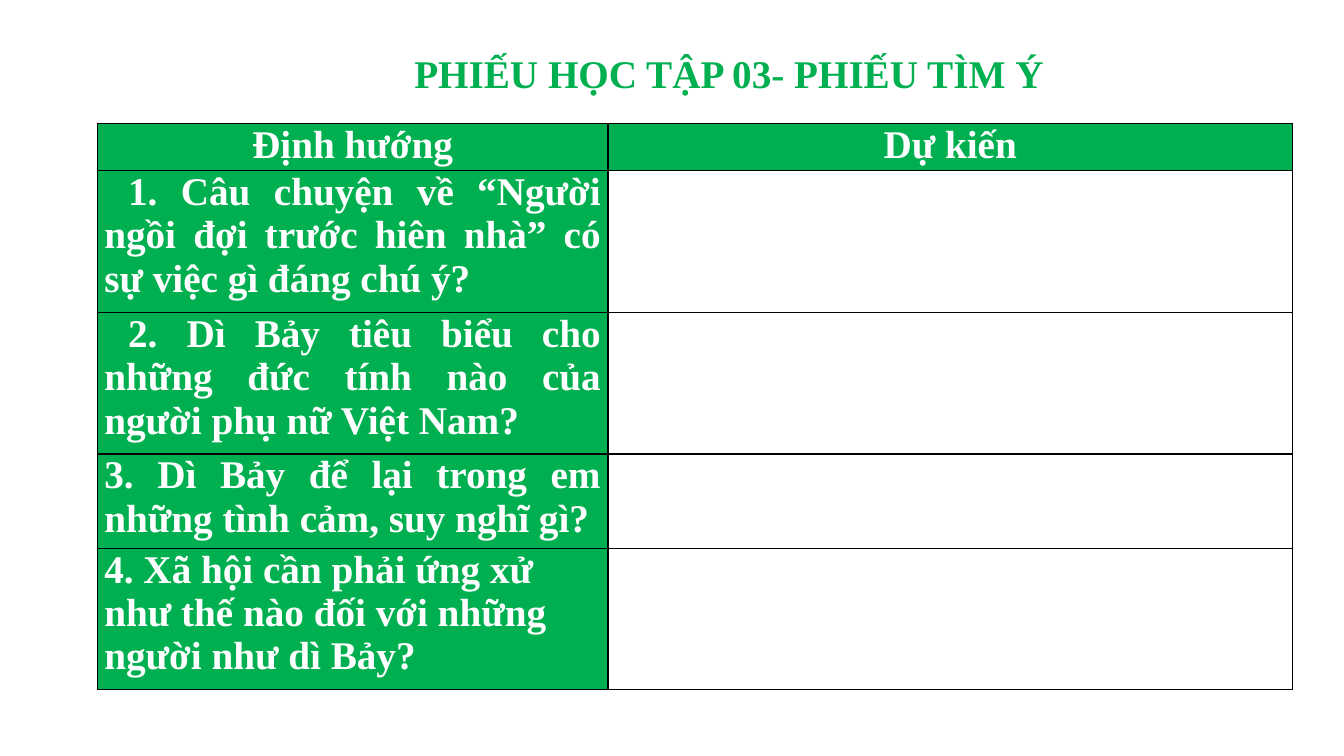
from dataclasses import dataclass

import lxml.etree
import pptx
import pptx.dml.color
import pptx.enum.text
import pptx.oxml.ns
import pptx.presentation
import pptx.slide
import pptx.table
import pptx.text.text
import pptx.util

Cm = pptx.util.Cm
Pt = pptx.util.Pt
Align = pptx.enum.text.PP_ALIGN

GREEN = pptx.dml.color.RGBColor(0x00, 0xB0, 0x50)
WHITE = pptx.dml.color.RGBColor(0xFF, 0xFF, 0xFF)
BLACK = pptx.dml.color.RGBColor(0x00, 0x00, 0x00)
FONT_NAME = "Times New Roman"
FONT_SIZE = Pt(28)
BORDER_WIDTH = Pt(1)
COLUMN_WIDTHS = (Cm(12.87), Cm(17.25))


@dataclass(frozen=True)
class WorksheetRow:
    height: pptx.util.Length
    texts: tuple[str, ...]
    alignment: Align = Align.JUSTIFY
    indent: pptx.util.Length = Cm(0)
    space_after: pptx.util.Length = Pt(0)


ROWS = (
    WorksheetRow(Cm(1.19), ("Định hướng", "Dự kiến"), Align.CENTER),
    WorksheetRow(
        Cm(3.57),
        ("1. Câu chuyện về “Người ngồi đợi trước hiên nhà” có sự việc gì đáng chú ý?", ""),
        indent=Cm(0.6),
    ),
    WorksheetRow(
        Cm(3.57),
        ("2. Dì Bảy tiêu biểu cho những đức tính nào của người phụ nữ Việt Nam?", ""),
        indent=Cm(0.6),
    ),
    WorksheetRow(Cm(2.37), ("3. Dì Bảy để lại trong em những tình cảm, suy nghĩ gì?", "")),
    WorksheetRow(
        Cm(3.57),
        ("4. Xã hội cần phải ứng xử như thế nào đối với những người như dì Bảy?", ""),
        Align.LEFT,
        space_after=Pt(8),
    ),
)


def format_paragraph(
    paragraph: pptx.text.text._Paragraph,
    color: pptx.dml.color.RGBColor,
    alignment: Align,
) -> None:
    paragraph.alignment = alignment
    paragraph.font.name = FONT_NAME
    paragraph.font.size = FONT_SIZE
    paragraph.font.bold = True
    paragraph.font.color.rgb = color


def add_borders(cell: pptx.table._Cell) -> None:
    qualified = pptx.oxml.ns.qn
    properties = cell._tc.get_or_add_tcPr()
    for side in ("lnL", "lnR", "lnT", "lnB"):
        line = lxml.etree.SubElement(properties, qualified(f"a:{side}"), w=str(BORDER_WIDTH))
        fill = lxml.etree.SubElement(line, qualified("a:solidFill"))
        lxml.etree.SubElement(fill, qualified("a:srgbClr"), val=str(BLACK))


def fill_cell(cell: pptx.table._Cell, text: str, row: WorksheetRow) -> None:
    add_borders(cell)
    cell.margin_left = cell.margin_right = Cm(0.18)
    cell.margin_top = cell.margin_bottom = Cm(0)
    if not text:
        cell.fill.background()
        return
    cell.fill.solid()
    cell.fill.fore_color.rgb = GREEN
    paragraph = cell.text_frame.paragraphs[0]
    paragraph.text = text
    paragraph.space_after = row.space_after
    if row.indent:
        paragraph._p.get_or_add_pPr().set("indent", str(row.indent))
    format_paragraph(paragraph, WHITE, row.alignment)


def add_title(slide: pptx.slide.Slide) -> None:
    title = slide.shapes.title
    title.left, title.top, title.width, title.height = Cm(9.9), Cm(0.94), Cm(16.94), Cm(1.52)
    frame = title.text_frame
    frame.text = "PHIẾU HỌC TẬP 03- PHIẾU TÌM Ý"
    frame.word_wrap = True
    frame.auto_size = pptx.enum.text.MSO_AUTO_SIZE.SHAPE_TO_FIT_TEXT
    frame.vertical_anchor = pptx.enum.text.MSO_ANCHOR.TOP
    paragraph = frame.paragraphs[0]
    paragraph.line_spacing = 1.15
    paragraph.space_before = Pt(0)
    format_paragraph(paragraph, GREEN, Align.CENTER)


def add_worksheet(slide: pptx.slide.Slide) -> None:
    table = slide.shapes.add_table(
        len(ROWS),
        len(COLUMN_WIDTHS),
        Cm(2.45),
        Cm(3.11),
        sum(COLUMN_WIDTHS),
        sum(row.height for row in ROWS),
    ).table
    table.first_row = False
    table.horz_banding = False
    for column, width in zip(table.columns, COLUMN_WIDTHS):
        column.width = width
    for table_row, row in zip(table.rows, ROWS):
        table_row.height = row.height
        for cell, text in zip(table_row.cells, row.texts):
            fill_cell(cell, text, row)


def main() -> None:
    presentation = pptx.Presentation()
    presentation.slide_width = Cm(33.87)
    presentation.slide_height = Cm(19.05)
    slide = presentation.slides.add_slide(presentation.slide_layouts.get_by_name("Title Only"))
    add_title(slide)
    add_worksheet(slide)
    presentation.save("out.pptx")


if __name__ == "__main__":
    main()
